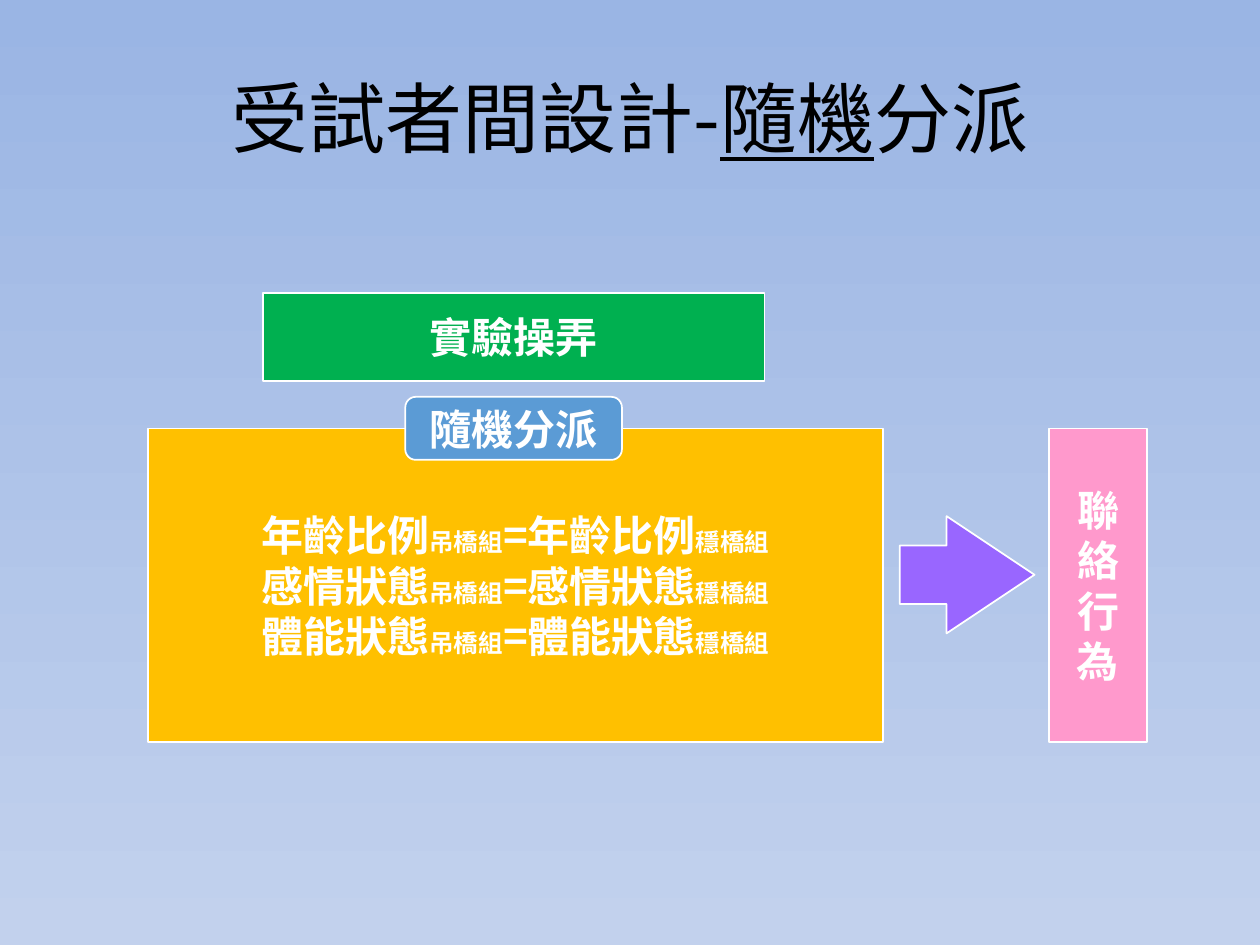
import pptx
import pptx.dml.color
import pptx.enum.shapes
import pptx.enum.text
import pptx.oxml.ns
import pptx.util
from dataclasses import dataclass
from lxml import etree

Pt = pptx.util.Pt
PRESET = pptx.enum.shapes.MSO_SHAPE


@dataclass(frozen=True)
class Theme:
    font: str = "Noto Sans CJK SC"
    title_size: float = 44
    label_size: float = 24
    group_size: float = 14
    line_pitch: float = 28.8
    black: str = "000000"
    white: str = "FFFFFF"
    sky_top: str = "9AB5E4"
    sky_bottom: str = "C2D1ED"
    green: str = "00B050"
    amber: str = "FFC000"
    blue: str = "5B9BD5"
    violet: str = "9966FF"
    pink: str = "FF99CC"


def rgb(value):
    return pptx.dml.color.RGBColor.from_string(value)


def add_text(paragraph, text, *, font, size, color, bold=False, underline=False):
    run = paragraph.add_run()
    run.text = text
    run.font.name = font
    run.font.size = Pt(size)
    run.font.color.rgb = rgb(color)
    run.font.bold = bold
    run.font.underline = underline
    east_asian = etree.SubElement(run.font._element, pptx.oxml.ns.qn("a:ea"))
    east_asian.set("typeface", font)


class SlideBuilder:
    def __init__(self, slide, theme):
        self.slide = slide
        self.theme = theme

    def background(self):
        fill = self.slide.background.fill
        fill.gradient()
        fill.gradient_angle = 270
        for stop, color in zip(fill.gradient_stops,
                               (self.theme.sky_top, self.theme.sky_bottom)):
            stop.color.rgb = rgb(color)

    def fill_frame(self, frame, lines, pitch=None, **style):
        """Fill a frame with lines, each a list of (text, format overrides)."""
        frame.word_wrap = True
        frame.vertical_anchor = pptx.enum.text.MSO_ANCHOR.MIDDLE
        for index, pieces in enumerate(lines):
            paragraph = frame.add_paragraph() if index else frame.paragraphs[0]
            paragraph.alignment = pptx.enum.text.PP_ALIGN.CENTER
            if pitch:
                paragraph.line_spacing = Pt(pitch)
            for text, overrides in pieces:
                add_text(paragraph, text,
                         **{"font": self.theme.font, **style, **overrides})

    def title(self, pieces, left, top, width, height):
        title = self.slide.shapes.title
        title.left, title.top = Pt(left), Pt(top)
        title.width, title.height = Pt(width), Pt(height)
        self.fill_frame(title.text_frame, [pieces],
                        size=self.theme.title_size, color=self.theme.black)

    def block(self, left, top, width, height, fill, preset=PRESET.RECTANGLE,
              lines=(), pitch=None):
        block = self.slide.shapes.add_shape(
            preset, Pt(left), Pt(top), Pt(width), Pt(height))
        block.shadow.inherit = False
        block.fill.solid()
        block.fill.fore_color.rgb = rgb(fill)
        block.line.color.rgb = rgb(self.theme.white)
        block.line.width = Pt(1)
        self.fill_frame(block.text_frame, lines, pitch,
                        size=self.theme.label_size, color=self.theme.white, bold=True)
        return block


def main():
    theme = Theme()
    deck = pptx.Presentation()
    deck.slide_width, deck.slide_height = Pt(720), Pt(540)
    builder = SlideBuilder(deck.slides.add_slide(deck.slide_layouts[5]), theme)
    builder.background()
    builder.title([("受試者間設計-", {}), ("隨機", {"underline": True}), ("分派", {})],
                  36, 21.6, 648, 90)

    panel_left, panel_top, panel_width, panel_height = 84.5, 244.8, 420, 179.3
    center_x = panel_left + panel_width / 2 - 1

    manipulation_width = 286.6
    builder.block(center_x - manipulation_width / 2, 167.5, manipulation_width, 50.4,
                  theme.green, lines=[[("實驗操弄", {})]])

    group = {"size": theme.group_size}
    equalities = [
        [(trait, {}), ("吊橋組", group), (f"={trait}", {}), ("穩橋組", group)]
        for trait in ("年齡比例", "感情狀態", "體能狀態")
    ]
    builder.block(panel_left, panel_top, panel_width, panel_height, theme.amber,
                  lines=equalities, pitch=theme.line_pitch)

    assignment_width, assignment_height = 123.8, 36
    builder.block(center_x - assignment_width / 2, panel_top - assignment_height / 2,
                  assignment_width, assignment_height, theme.blue,
                  PRESET.ROUNDED_RECTANGLE, [[("隨機分派", {})]])

    arrow_height = 67
    arrow = builder.block(514.2, panel_top + (panel_height - arrow_height) / 2 - 6,
                          77, arrow_height, theme.violet, PRESET.RIGHT_ARROW)
    arrow.adjustments[0], arrow.adjustments[1] = 0.5, 0.75

    builder.block(599.5, panel_top, 55.8, panel_height, theme.pink,
                  lines=[[("聯絡行為", {})]], pitch=theme.line_pitch)
    deck.save("out.pptx")


if __name__ == "__main__":
    main()
